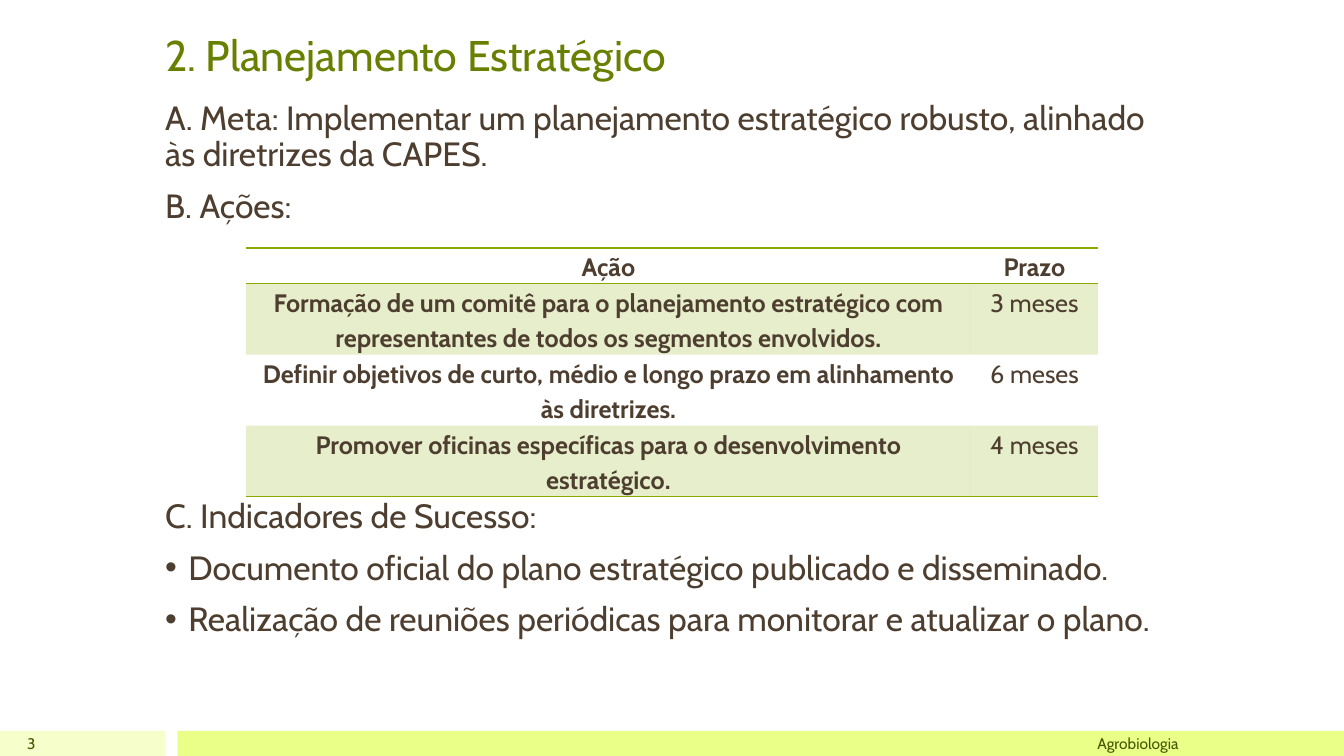
import pptx
import pptx.util
import pptx.dml.color
import pptx.enum.shapes
import pptx.enum.text
import pptx.oxml
import pptx.oxml.ns

Pt = pptx.util.Pt
qn = pptx.oxml.ns.qn
align = pptx.enum.text.PP_ALIGN
anchor = pptx.enum.text.MSO_ANCHOR
BROWN, GREEN, OLIVE, LIME = "4D3E2F", "688000", "455500", "8BAA00"


def paint(item, code):
    if hasattr(item, "solid"):
        item.solid()
        item = item.fore_color
    item.rgb = pptx.dml.color.RGBColor.from_string(code)


def write(para, text, code, look, font):
    run = para.add_run()
    run.text = text
    for key, val in look.items():
        setattr(para, key, val)
    for key, val in {"name": "Cabin", **font}.items():
        setattr(run.font, key, val)
    paint(run.font.color, code)


deck = pptx.Presentation()
deck.slide_width = pptx.util.Inches(13.33)
deck.slide_height = pptx.util.Inches(7.5)
col, row = deck.slide_width / 100, deck.slide_height / 100
slide = deck.slides.add_slide(deck.slide_layouts[6])

left, wide = 11.55, 76.9
foot, band = 96.67, 3.33

for x, w, code in [(0, 12.3, "F6FFCC"), (13.2, 86.8, "E9FF88")]:
    bar = slide.shapes.add_shape(
        pptx.enum.shapes.MSO_SHAPE.RECTANGLE,
        int(x * col), int(foot * row), int(w * col), int(band * row))
    bar.shadow.inherit = False
    bar.line.fill.background()
    paint(bar.fill, code)

body = {"line_spacing": 0.9, "space_before": Pt(11)}
right = {"alignment": align.RIGHT}
texts = [
    (left, 2.8, wide, 8.4, anchor.BOTTOM, GREEN, 30.6, {},
     ["2. Planejamento Estratégico"]),
    (left, 12.8, wide, 19, anchor.TOP, BROWN, 24, body,
     ["A. Meta: Implementar um planejamento estratégico robusto, alinhado às diretrizes da CAPES.",
      "B. Ações:"]),
    (left, 65.4, wide, 24, anchor.TOP, BROWN, 24, body,
     ["C. Indicadores de Sucesso:",
      "• Documento oficial do plano estratégico publicado e disseminado.",
      "• Realização de reuniões periódicas para monitorar e atualizar o plano."]),
    (0, foot, 3.38, band, anchor.MIDDLE, OLIVE, 11, right, ["3"]),
    (13.43, foot, 75, band, anchor.MIDDLE, OLIVE, 11, right, ["Agrobiologia"]),
]
for x, y, w, h, hold, code, size, look, lines in texts:
    frame = slide.shapes.add_textbox(
        int(x * col), int(y * row), int(w * col), int(h * row)).text_frame
    frame.word_wrap = True
    frame.vertical_anchor = hold
    for i, line in enumerate(lines):
        para = frame.add_paragraph() if i else frame.paragraphs[0]
        write(para, line.removeprefix("• "), code, look, {"size": Pt(size)})
        if line.startswith("•"):
            prop = para._p.get_or_add_pPr()
            dent = pptx.util.Inches(0.23)
            prop.set("marL", str(dent))
            prop.set("indent", str(-dent))
            for tag, key, val in [("buFont", "typeface", "Arial"), ("buChar", "char", "•")]:
                pptx.oxml.ns.qn(f"a:{tag}")
                node = prop.makeelement(qn(f"a:{tag}"), {key: val})
                prop.append(node)

plan = [
    ("Ação", "Prazo"),
    ("Formação de um comitê para o planejamento estratégico com representantes de todos os segmentos envolvidos.",
     "3 meses"),
    ("Definir objetivos de curto, médio e longo prazo em alinhamento às diretrizes.", "6 meses"),
    ("Promover oficinas específicas para o desenvolvimento estratégico.", "4 meses"),
]
spans, rises = [53.94, 9.45], [4.7, 9.4, 9.4, 9.4]
grid = slide.shapes.add_table(
    len(plan), len(spans), int(18.3 * col), int(32.8 * row),
    int(sum(spans) * col), int(sum(rises) * row)).table
grid.first_row = grid.horz_banding = False
grid._tbl.tblPr.find(qn("a:tableStyleId")).text = "{2D5ABB26-0587-4C30-8999-92F81FD0307C}"
for c, span in enumerate(spans):
    grid.columns[c].width = int(span * col)

inset = pptx.util.Inches(0.07)
pads = {"margin_left": inset, "margin_right": inset, "margin_top": 0, "margin_bottom": 0}
look = {"alignment": align.CENTER, "line_spacing": 1.15, "space_after": Pt(10)}
edges = {0: ["lnT", "lnB"], len(plan) - 1: ["lnB"]}
space = "http://schemas.openxmlformats.org/drawingml/2006/main"
for r, words in enumerate(plan):
    grid.rows[r].height = int(rises[r] * row)
    for c, word in enumerate(words):
        cell = grid.cell(r, c)
        for key, val in pads.items():
            setattr(cell, key, val)
        write(cell.text_frame.paragraphs[0], word, BROWN, look,
              {"size": Pt(18), "bold": r == 0 or c == 0})
        prop = cell._tc.get_or_add_tcPr()
        for edge in edges.get(r, []):
            prop.append(pptx.oxml.parse_xml(
                f'<a:{edge} xmlns:a="{space}" w="{Pt(1)}"><a:solidFill>'
                f'<a:srgbClr val="{LIME}"/></a:solidFill></a:{edge}>'))
        if r % 2:
            paint(cell.fill, LIME)
            tone = prop.find(qn("a:solidFill")).find(qn("a:srgbClr"))
            tone.append(tone.makeelement(qn("a:alpha"), {"val": "20000"}))
        else:
            cell.fill.background()

deck.save("out.pptx")
